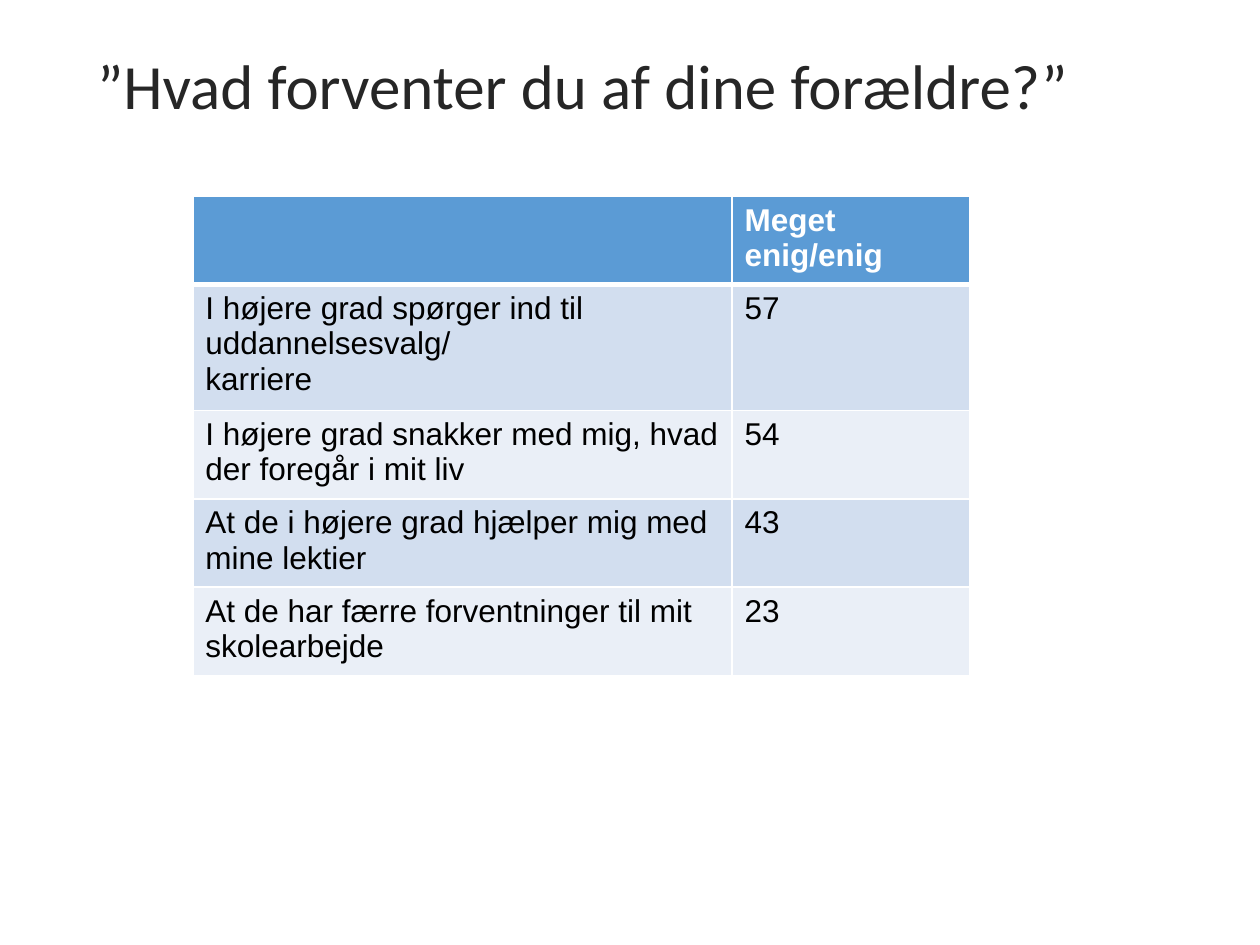
"""Build a slide with a table of what pupils expect of their parents."""
import dataclasses

import lxml.etree
import pptx
import pptx.dml.color
import pptx.enum.text
import pptx.oxml.ns
import pptx.presentation
import pptx.slide
import pptx.table
import pptx.text.text
import pptx.util

Inches = pptx.util.Inches


@dataclasses.dataclass(frozen=True)
class Theme:
    title_font: str = "Calibri"
    body_font: str = "Arial"
    title_size: int = 36
    body_size: int = 18
    title_color: str = "262626"
    text_color: str = "000000"
    header_text: str = "FFFFFF"
    header_fill: str = "5B9BD5"
    band_fills: tuple[str, str] = ("D2DEEF", "EAEFF7")
    rule_color: str = "FFFFFF"
    rule_width: int = 1
    header_rule_width: int = 3


@dataclasses.dataclass(frozen=True)
class Answer:
    expectation: str
    agreement: str
    height: float = 0.7


THEME = Theme()
COLUMN_WIDTHS = (4.28, 1.89)
ANSWERS = (
    Answer("", "Meget enig/enig"),
    Answer("I højere grad spørger ind til uddannelsesvalg/\nkarriere", "57", 1),
    Answer("I højere grad snakker med mig, hvad der foregår i mit liv", "54"),
    Answer("At de i højere grad hjælper mig med mine lektier", "43"),
    Answer("At de har færre forventninger til mit skolearbejde", "23"),
)


def rgb(color: str) -> pptx.dml.color.RGBColor:
    return pptx.dml.color.RGBColor.from_string(color)


def write(paragraph: pptx.text.text._Paragraph, text: str, font: str,
          size: int, color: str, bold: bool = False) -> None:
    for number, line in enumerate(text.split("\n")):
        if number:
            paragraph.add_line_break()
        run = paragraph.add_run()
        run.text = line
        run.font.name = font
        run.font.size = pptx.util.Pt(size)
        run.font.bold = bold
        run.font.color.rgb = rgb(color)


def rule_cell(cell: pptx.table._Cell, widths: dict[str, int]) -> None:
    qn = pptx.oxml.ns.qn
    properties = cell._tc.get_or_add_tcPr()
    for position, (side, width) in enumerate(widths.items()):
        rule = lxml.etree.Element(qn(f"a:ln{side}"), w=str(pptx.util.Pt(width)))
        fill = lxml.etree.SubElement(rule, qn("a:solidFill"))
        lxml.etree.SubElement(fill, qn("a:srgbClr"), val=THEME.rule_color)
        properties.insert(position, rule)


def draw_title(slide: pptx.slide.Slide, text: str) -> None:
    title = slide.shapes.title
    title.left, title.top = Inches(0.67), Inches(0.36)
    title.width, title.height = Inches(8.11), Inches(0.7)
    frame = title.text_frame
    frame.auto_size = pptx.enum.text.MSO_AUTO_SIZE.NONE
    frame.vertical_anchor = pptx.enum.text.MSO_ANCHOR.MIDDLE
    paragraph = frame.paragraphs[0]
    paragraph.alignment = pptx.enum.text.PP_ALIGN.LEFT
    paragraph.line_spacing = 0.9
    write(paragraph, text, THEME.title_font, THEME.title_size, THEME.title_color)


def draw_cell(cell: pptx.table._Cell, text: str, row: int) -> None:
    header = row == 0
    cell.fill.solid()
    cell.fill.fore_color.rgb = rgb(
        THEME.header_fill if header else THEME.band_fills[(row - 1) % 2])
    widths = dict.fromkeys("LRTB", THEME.rule_width)
    if row < 2:
        widths["B" if header else "T"] = THEME.header_rule_width
    rule_cell(cell, widths)
    if text:
        write(cell.text_frame.paragraphs[0], text, THEME.body_font, THEME.body_size,
              THEME.header_text if header else THEME.text_color, header)


def draw_answers(slide: pptx.slide.Slide, answers: tuple[Answer, ...]) -> None:
    table = slide.shapes.add_table(
        len(answers), len(COLUMN_WIDTHS), Inches(1.53), Inches(1.56),
        Inches(sum(COLUMN_WIDTHS)), Inches(sum(a.height for a in answers))).table
    for column, width in zip(table.columns, COLUMN_WIDTHS):
        column.width = Inches(width)
    for row, answer in enumerate(answers):
        table.rows[row].height = Inches(answer.height)
        for column, text in enumerate((answer.expectation, answer.agreement)):
            draw_cell(table.cell(row, column), text, row)


def main() -> None:
    presentation = pptx.Presentation()
    presentation.slide_width, presentation.slide_height = Inches(10), Inches(7.5)
    slide = presentation.slides.add_slide(presentation.slide_layouts[5])
    draw_title(slide, "”Hvad forventer du af dine forældre?”")
    draw_answers(slide, ANSWERS)
    presentation.save("out.pptx")


if __name__ == "__main__":
    main()
